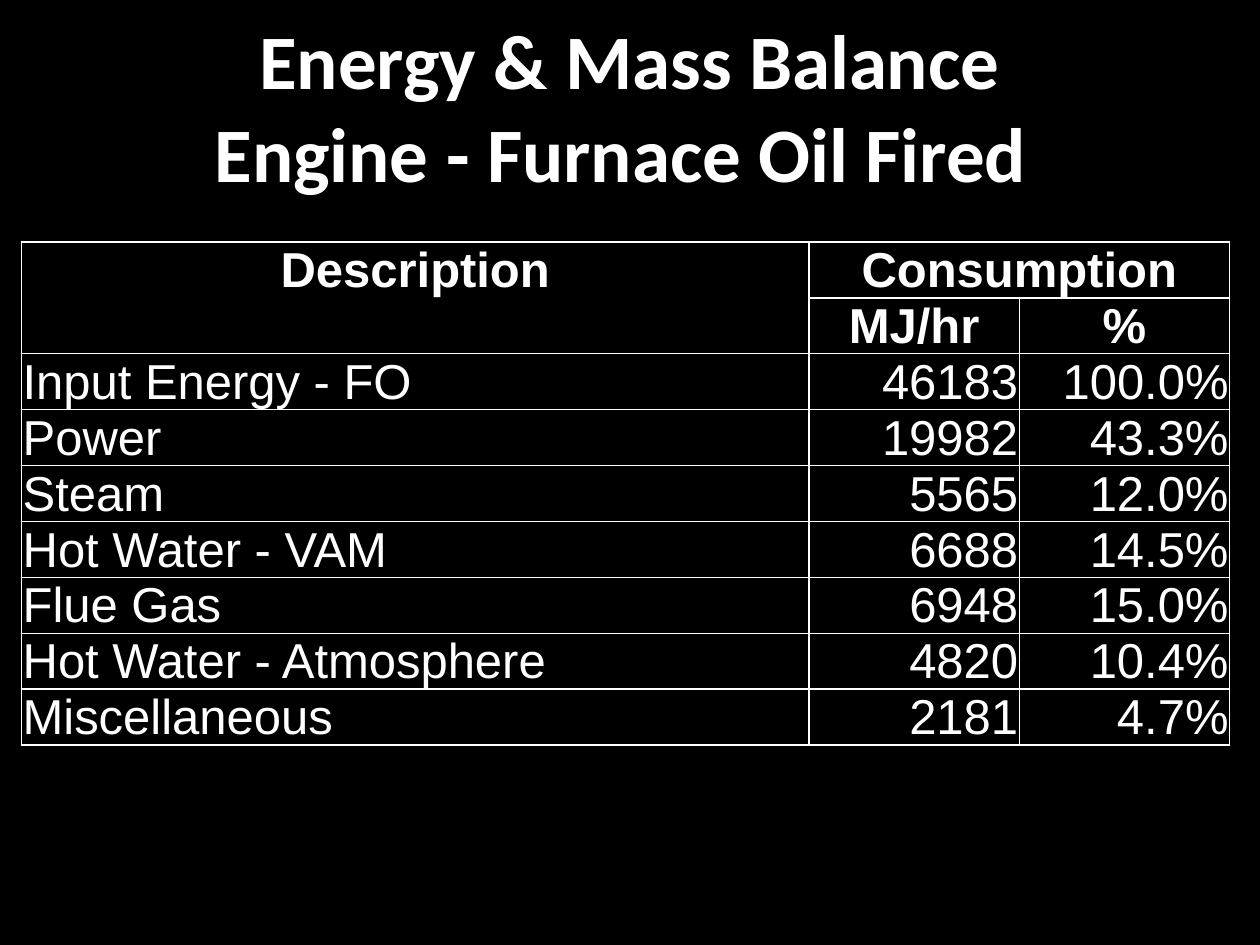
"""Build the energy and mass balance slide for a furnace oil fired engine."""
import pptx
import pptx.dml.color
import pptx.enum.text
import pptx.oxml
import pptx.oxml.ns
import pptx.util

Inches = pptx.util.Inches
Align = pptx.enum.text.PP_ALIGN
Anchor = pptx.enum.text.MSO_ANCHOR

HEADERS = [("Description", "Consumption", ""), ("", "MJ/hr", "%")]
BALANCE = [
    ("Input Energy - FO", "46183", "100.0%"),
    ("Power", "19982", "43.3%"),
    ("Steam", "5565", "12.0%"),
    ("Hot Water - VAM", "6688", "14.5%"),
    ("Flue Gas", "6948", "15.0%"),
    ("Hot Water - Atmosphere", "4820", "10.4%"),
    ("Miscellaneous", "2181", "4.7%"),
]


def color(value):
    """Turn a hex string into a colour."""
    return pptx.dml.color.RGBColor.from_string(value)


def apply(target, values):
    """Set each named attribute on the target."""
    for name, value in values.items():
        setattr(target, name, value)


class BalanceSlide:
    """Hold the style and the current slide."""

    ink = "FFFFFF"
    ground = "000000"
    title_font = {"name": "Calibri", "size": pptx.util.Pt(44), "bold": True}
    header_font = {"name": "Arial", "size": pptx.util.Pt(28), "bold": True}
    body_font = {**header_font, "bold": False}
    cell_format = {
        "margin_left": Inches(0.01),
        "margin_right": Inches(0.01),
        "margin_top": Inches(0.01),
        "margin_bottom": 0,
        "vertical_anchor": Anchor.TOP,
    }

    def __init__(self, deck):
        """Add a title-only slide with a plain ground."""
        self.slide = deck.slides.add_slide(deck.slide_layouts[5])
        fill = self.slide.background.fill
        fill.solid()
        fill.fore_color.rgb = color(self.ground)

    def set_text(self, frame, text, font, alignment):
        """Fill a text frame with one formatted paragraph."""
        frame.text = text
        para = frame.paragraphs[0]
        para.alignment = alignment
        for span in para.runs:
            apply(span.font, font)
            span.font.color.rgb = color(self.ink)

    def title(self, text, left, top, width, height):
        """Place and format the title."""
        box = self.slide.shapes.title
        apply(box, {"left": Inches(left), "top": Inches(top),
                    "width": Inches(width), "height": Inches(height)})
        apply(box.text_frame, {"vertical_anchor": Anchor.MIDDLE, "word_wrap": True})
        self.set_text(box.text_frame, text, self.title_font, Align.CENTER)

    def border(self, cell):
        """Draw a thin line on the four sides of a cell."""
        properties = cell._tc.get_or_add_tcPr()
        for index, side in enumerate(("lnL", "lnR", "lnT", "lnB")):
            line = pptx.oxml.parse_xml(
                f'<a:{side} {pptx.oxml.ns.nsdecls("a")} w="{pptx.util.Pt(1)}">'
                f'<a:solidFill><a:srgbClr val="{self.ink}"/></a:solidFill></a:{side}>')
            properties.insert(index, line)

    def table(self, headers, records, left, top, widths, row_height):
        """Add a ruled table with a two-row merged header."""
        rows = headers + records
        grid = self.slide.shapes.add_table(
            len(rows), len(widths), Inches(left), Inches(top),
            Inches(sum(widths)), Inches(row_height * len(rows))).table
        apply(grid, {"first_row": False, "horz_banding": False})
        for column, width in zip(grid.columns, widths):
            column.width = Inches(width)
        for r, texts in enumerate(rows):
            grid.rows[r].height = Inches(row_height)
            is_header = r < len(headers)
            font = self.header_font if is_header else self.body_font
            for c, text in enumerate(texts):
                cell = grid.cell(r, c)
                apply(cell, self.cell_format)
                cell.fill.background()
                self.border(cell)
                value_align = Align.RIGHT if c else Align.LEFT
                self.set_text(cell.text_frame, text, font,
                              Align.CENTER if is_header else value_align)
        grid.cell(0, 0).merge(grid.cell(1, 0))
        grid.cell(0, 1).merge(grid.cell(0, 2))


def main():
    """Build and save the deck."""
    deck = pptx.Presentation()
    apply(deck, {"slide_width": Inches(10), "slide_height": Inches(7.5)})
    page = BalanceSlide(deck)
    page.title("Energy & Mass Balance\vEngine - Furnace Oil Fired ", 0, 0, 10, 1.67)
    page.table(HEADERS, BALANCE, 0.17, 1.92, [6.25, 1.67, 1.67], 0.44)
    deck.save("out.pptx")


if __name__ == "__main__":
    main()
